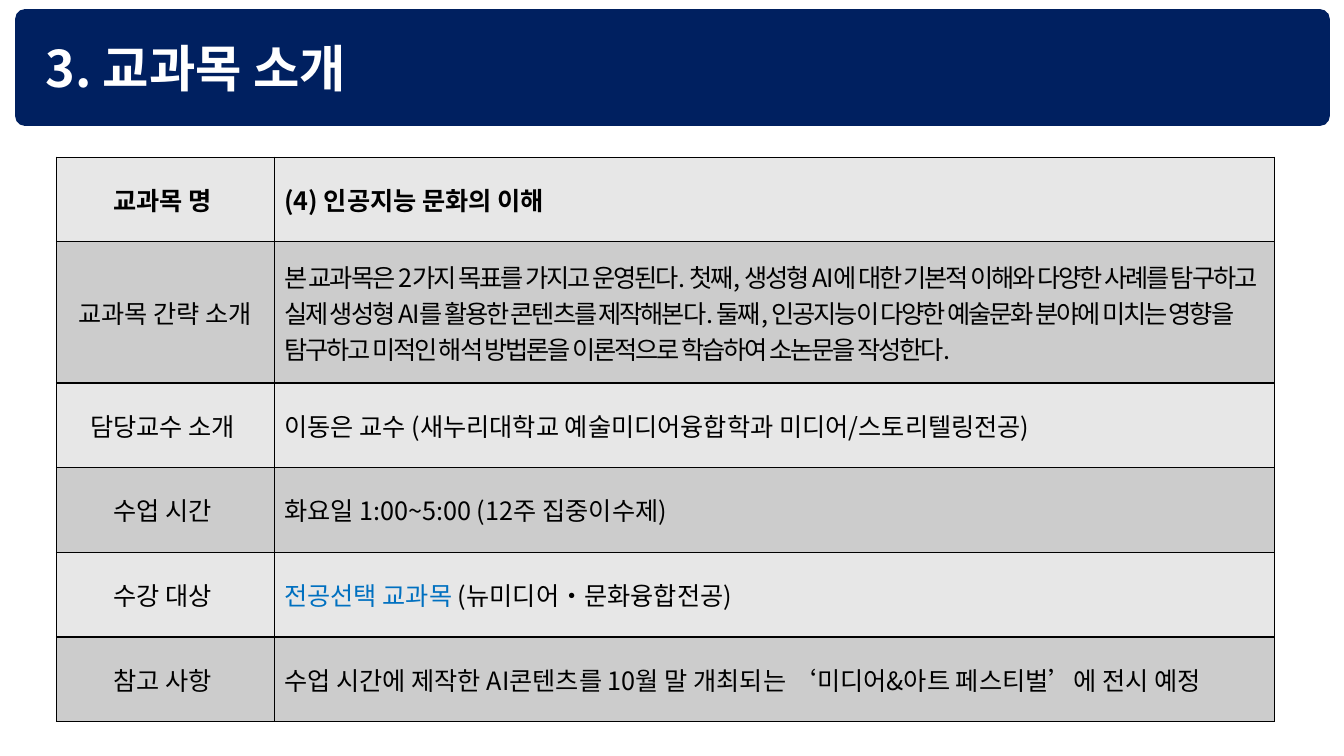
from lxml import etree
from pptx import Presentation
from pptx.dml.color import RGBColor
from pptx.enum.shapes import MSO_SHAPE
from pptx.enum.text import MSO_ANCHOR, MSO_AUTO_SIZE, PP_ALIGN
from pptx.oxml import parse_xml
from pptx.oxml.ns import nsdecls, qn
from pptx.util import Inches, Pt

FONT = "Noto Sans CJK KR"
NAVY, WHITE, BLACK, BLUE = "002060", "FFFFFF", "000000", "0070C0"
ROW_FILLS = ("E7E7E7", "CCCCCC")

# Each value is a list of (text, colour) runs.
COURSE_FACTS = [
    ("교과목 명 ", [("(4) 인공지능 문화의 이해", BLACK)]),
    ("교과목 간략 소개", [(
        "본 교과목은 2가지 목표를 가지고 운영된다. 첫째, 생성형 AI에 대한 기본적 이해와 "
        "다양한 사례를 탐구하고 실제 생성형 AI를 활용한 콘텐츠를 제작해본다. 둘째, "
        "인공지능이 다양한 예술문화 분야에 미치는 영향을 탐구하고 미적인 해석 방법론을 "
        "이론적으로 학습하여 소논문을 작성한다.", BLACK)]),
    ("담당교수 소개 ", [("이동은 교수 (새누리대학교 예술미디어융합학과 미디어/스토리텔링전공)", BLACK)]),
    ("수업 시간 ", [("화요일 1:00~5:00 (12주 집중이수제)", BLACK)]),
    ("수강 대상 ", [("전공선택 교과목 ", BLUE), ("(뉴미디어・문화융합전공)", BLACK)]),
    ("참고 사항 ", [("수업 시간에 제작한 AI콘텐츠를 10월 말 개최되는 ‘미디어&아트 페스티벌’에 전시 예정", BLACK)]),
]
NAME_ROW, SUMMARY_ROW = 0, 1


def rgb(color):
    return RGBColor.from_string(color)


class CourseSlide:
    def __init__(self, presentation):
        self.slide = presentation.slides.add_slide(presentation.slide_layouts[5])
        self.shapes = self.slide.shapes

    def format_paragraph(self, paragraph, size, color, bold, align, spacing=0):
        """Style a whole paragraph; spacing is the letter spacing in points."""
        paragraph.alignment = align
        font = paragraph.font
        font.name, font.size, font.bold = FONT, Pt(size), bold
        font.color.rgb = rgb(color)
        properties = font._element
        etree.SubElement(properties, qn("a:ea")).set("typeface", FONT)
        if spacing:
            properties.set("spc", str(round(spacing * 100)))

    def add_title(self, text, left, top, width, height):
        title = self.shapes.title
        title.left, title.top = Inches(left), Inches(top)
        title.width, title.height = Inches(width), Inches(height)
        frame = title.text_frame
        frame.text = text
        frame.word_wrap = True
        frame.auto_size = MSO_AUTO_SIZE.NONE
        frame.vertical_anchor = MSO_ANCHOR.MIDDLE
        self.format_paragraph(frame.paragraphs[0], 36, WHITE, True, PP_ALIGN.LEFT)

    def add_banner(self, left, top, width, height):
        """Add the rounded band behind the title."""
        banner = self.shapes.add_shape(
            MSO_SHAPE.ROUNDED_RECTANGLE,
            Inches(left), Inches(top), Inches(width), Inches(height))
        banner.adjustments[0] = 0.085
        banner.shadow.inherit = False
        banner.fill.solid()
        banner.fill.fore_color.rgb = rgb(NAVY)
        banner.line.fill.background()
        self.shapes.title.element.addprevious(banner.element)

    def add_facts_table(self, facts, left, top, column_widths, row_heights):
        table = self.shapes.add_table(
            len(facts), len(column_widths), Inches(left), Inches(top),
            Inches(sum(column_widths)), Inches(sum(row_heights))).table
        table.first_row = table.horz_banding = False
        for column, width in zip(table.columns, column_widths):
            column.width = Inches(width)
        for index, (label, value) in enumerate(facts):
            table.rows[index].height = Inches(row_heights[index])
            fill = ROW_FILLS[index % 2]
            bold = index == NAME_ROW
            spacing = -1.5 if index == SUMMARY_ROW else 0
            self.fill_cell(table.cell(index, 0), [(label, BLACK)], fill, bold, PP_ALIGN.CENTER)
            self.fill_cell(table.cell(index, 1), value, fill, bold, PP_ALIGN.LEFT, spacing)

    def fill_cell(self, cell, runs, fill, bold, align, spacing=0):
        cell.vertical_anchor = MSO_ANCHOR.MIDDLE
        paragraph = cell.text_frame.paragraphs[0]
        self.format_paragraph(paragraph, 18, BLACK, bold, align, spacing)
        for text, color in runs:
            run = paragraph.add_run()
            run.text = text
            if color != BLACK:
                run.font.color.rgb = rgb(color)
        self.add_borders(cell)
        cell.fill.solid()
        cell.fill.fore_color.rgb = rgb(fill)

    def add_borders(self, cell):
        properties = cell._tc.get_or_add_tcPr()
        for side in ("lnL", "lnR", "lnT", "lnB"):
            properties.append(parse_xml(
                f'<a:{side} {nsdecls("a")} w="{Pt(1)}"><a:solidFill>'
                f'<a:srgbClr val="{BLACK}"/></a:solidFill></a:{side}>'))


def main():
    presentation = Presentation()
    presentation.slide_width, presentation.slide_height = Inches(13.33), Inches(7.5)
    course = CourseSlide(presentation)
    course.add_title("3. 교과목 소개", 0.35, 0.31, 11.73, 0.71)
    course.add_banner(0.15, 0.09, 13.04, 1.16)
    row_heights = [1.4 if row == SUMMARY_ROW else 0.84 for row in range(len(COURSE_FACTS))]
    course.add_facts_table(COURSE_FACTS, 0.56, 1.56, [2.16, 9.92], row_heights)
    presentation.save("out.pptx")


if __name__ == "__main__":
    main()
